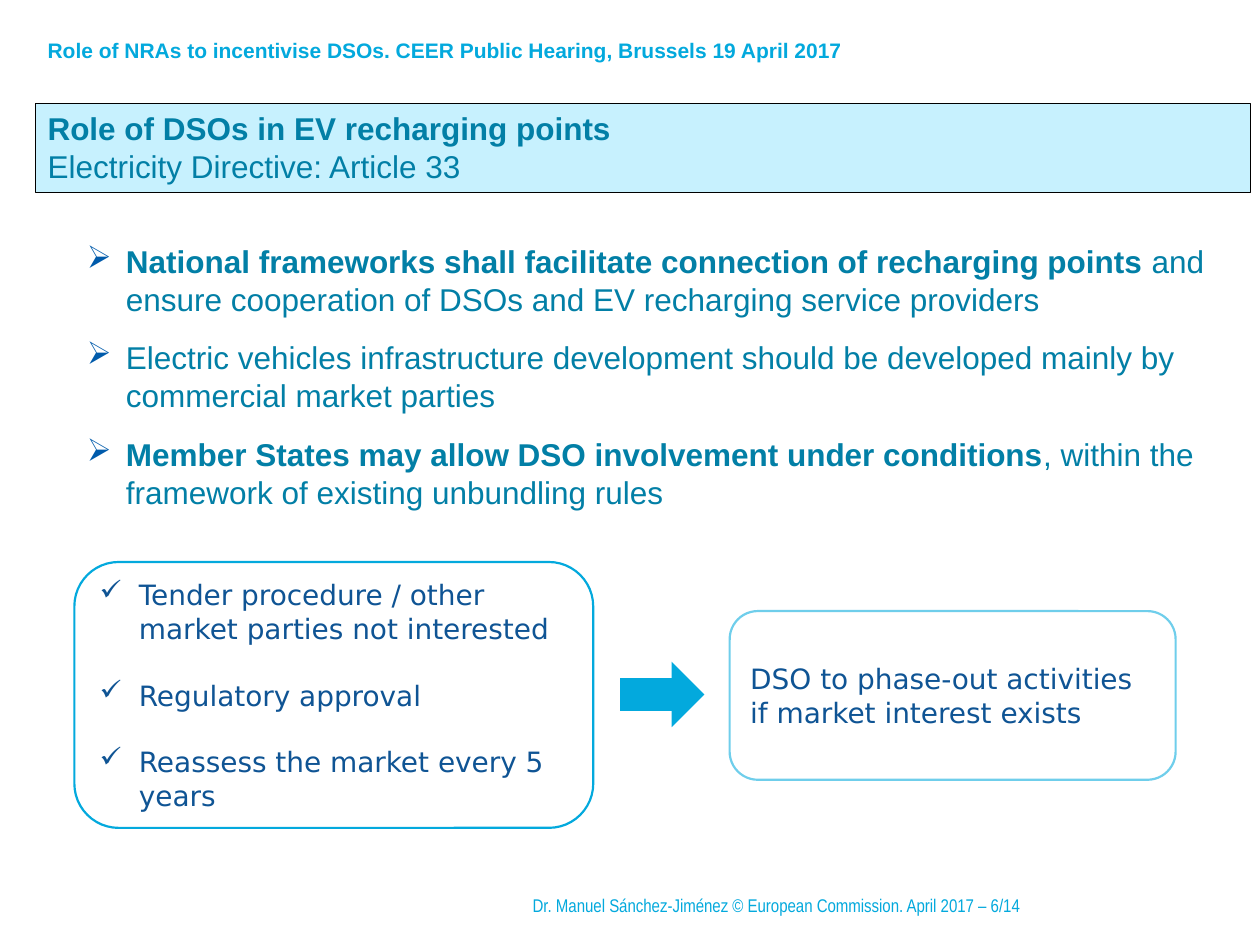
from lxml import etree
from pptx import Presentation
from pptx.dml.color import RGBColor
from pptx.enum.shapes import MSO_SHAPE
from pptx.enum.text import MSO_ANCHOR, PP_ALIGN
from pptx.oxml.ns import qn
from pptx.util import Cm, Pt

TOP, MIDDLE = MSO_ANCHOR.TOP, MSO_ANCHOR.MIDDLE
LEFT = PP_ALIGN.LEFT
RECTANGLE, ROUNDED = MSO_SHAPE.RECTANGLE, MSO_SHAPE.ROUNDED_RECTANGLE
RIGHT_ARROW = MSO_SHAPE.RIGHT_ARROW

THEME = {
    "cyan": "03A9DD", "pale": "C7F1FE", "teal": "027FA6",
    "navy": "0F5494", "bullet": "005BAB", "black": "000000",
    "sans": "Arial", "narrow": "Arial Narrow", "wide": "DejaVu Sans",
    "header_size": 12, "footer_size": 10.5, "body_size": 18, "box_size": 16,
}

HEADER = [[("Role of NRAs to incentivise DSOs. CEER Public Hearing, Brussels 19 April 2017", True)]]
FOOTER = [[("Dr. Manuel Sánchez-Jiménez © European Commission. April 2017 – 6/14", False)]]
TITLE = [
    [("Role of DSOs in EV recharging points", True)],
    [("Electricity Directive: Article 33", False)],
]
POINTS = [
    [("National frameworks shall facilitate connection of recharging points ", True),
     ("and ensure cooperation of DSOs and EV recharging service providers", False)],
    [("Electric vehicles infrastructure development should be developed mainly by "
      "commercial market parties", False)],
    [("Member States may allow DSO involvement under conditions", True),
     (", within the framework of existing unbundling rules", False)],
]
CONDITIONS = [
    [("Tender procedure / other market parties not interested", False)],
    [("Regulatory approval", False)],
    [("Reassess the market every 5 years", False)],
]
OUTCOME = [[("DSO to phase-out activities if market interest exists", False)]]

HEADER_AREA = (0.71, 0.64, 23.19, 0.76)
FOOTER_AREA = (10.49, 17.73, 10.8, 1.02)
TITLE_AREA = (0.71, 2.08, 24.49, 1.8)
POINTS_AREA = (1.5, 4.75, 23.67, 5.74)
CONDITIONS_AREA = (1.5, 11.33, 10.46, 5.36)
ARROW_AREA = (12.5, 13.34, 1.7, 1.32)
OUTCOME_AREA = (14.71, 12.32, 8.99, 3.4)


def color(name):
    return RGBColor.from_string(THEME[name])


def add_bullet(paragraph, character, color_name, indent):
    properties = paragraph._p.get_or_add_pPr()
    properties.set("marL", str(Cm(indent)))
    properties.set("indent", str(-Cm(indent)))
    bullet_color = etree.SubElement(properties, qn("a:buClr"))
    etree.SubElement(bullet_color, qn("a:srgbClr"), val=THEME[color_name])
    etree.SubElement(properties, qn("a:buChar"), char=character)


def write_text(shape, paragraphs, *, font, size, ink, anchor=TOP, gap=0,
               bullet=None, bullet_ink=None, indent=0.79):
    frame = shape.text_frame
    frame.word_wrap = True
    frame.vertical_anchor = anchor
    for index, runs in enumerate(paragraphs):
        paragraph = frame.add_paragraph() if index else frame.paragraphs[0]
        paragraph.alignment = LEFT
        if index and gap:
            paragraph.space_before = Pt(gap)
        if bullet:
            add_bullet(paragraph, bullet, bullet_ink or ink, indent)
        for text, bold in runs:
            run = paragraph.add_run()
            run.text = text
            run.font.name = THEME[font]
            run.font.size = Pt(THEME[size])
            run.font.bold = bold
            run.font.color.rgb = color(ink)


def add_text(slide, area, paragraphs, **text_format):
    write_text(slide.shapes.add_textbox(*map(Cm, area)), paragraphs, **text_format)


def add_box(slide, kind, area, fill=None, line=None, width=1.25, opacity=None):
    shape = slide.shapes.add_shape(kind, *map(Cm, area))
    shape.shadow.inherit = False
    if fill:
        shape.fill.solid()
        shape.fill.fore_color.rgb = color(fill)
    else:
        shape.fill.background()
    if line:
        shape.line.color.rgb = color(line)
        shape.line.width = Pt(width)
    else:
        shape.line.fill.background()
    if opacity:
        line_color = shape.line._ln.find(".//" + qn("a:srgbClr"))
        etree.SubElement(line_color, qn("a:alpha"), val=str(opacity * 1000))
    return shape


def main():
    presentation = Presentation()
    presentation.slide_width, presentation.slide_height = Cm(25.4), Cm(19.05)
    slide = presentation.slides.add_slide(presentation.slide_layouts[6])

    add_text(slide, HEADER_AREA, HEADER, font="sans", size="header_size", ink="cyan")
    add_text(slide, FOOTER_AREA, FOOTER, font="narrow", size="footer_size",
             ink="cyan", anchor=MIDDLE)

    title = add_box(slide, RECTANGLE, TITLE_AREA, fill="pale", line="black", width=0.25)
    write_text(title, TITLE, font="sans", size="body_size", ink="teal")
    add_text(slide, POINTS_AREA, POINTS, font="sans", size="body_size", ink="teal",
             gap=12, bullet="➢", bullet_ink="bullet")

    box_format = {"font": "wide", "size": "box_size", "ink": "navy", "anchor": MIDDLE}
    conditions = add_box(slide, ROUNDED, CONDITIONS_AREA, line="cyan")
    write_text(conditions, CONDITIONS, gap=19, bullet="✓", **box_format)
    add_box(slide, RIGHT_ARROW, ARROW_AREA, fill="cyan")
    outcome = add_box(slide, ROUNDED, OUTCOME_AREA, line="cyan", opacity=57)
    write_text(outcome, OUTCOME, **box_format)

    presentation.save("out.pptx")


if __name__ == "__main__":
    main()
